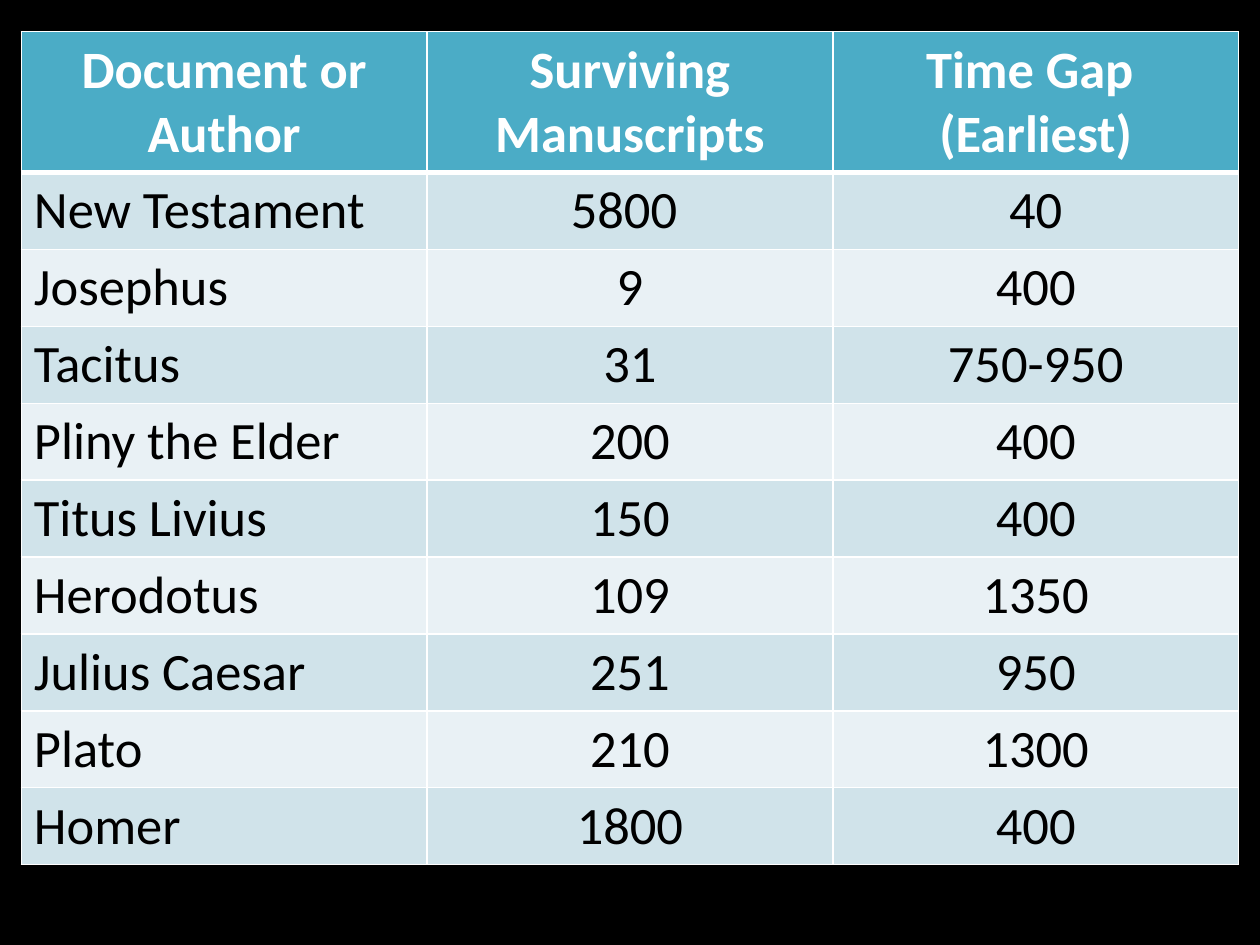
from dataclasses import dataclass

from lxml.etree import SubElement
from pptx import Presentation
from pptx.dml.color import RGBColor as Rgb
from pptx.enum.text import PP_ALIGN as Align
from pptx.oxml.ns import qn
from pptx.util import Cm, Pt

HEADINGS = ["Document or Author", "Surviving\nManuscripts", "Time Gap \n(Earliest)"]
RECORDS = [
    ("New Testament", "5800 ", "40"),
    ("Josephus", "9", "400"),
    ("Tacitus", "31", "750-950"),
    ("Pliny the Elder", "200", "400"),
    ("Titus Livius", "150", "400"),
    ("Herodotus", "109", "1350"),
    ("Julius Caesar", "251", "950"),
    ("Plato", "210", "1300"),
    ("Homer", "1800", "400"),
]


@dataclass(frozen=True)
class Theme:
    font: str = "Calibri"
    size: int = 30
    background: str = "000000"
    heading_fill: str = "4BACC6"
    heading_text: str = "FFFFFF"
    body_text: str = "000000"
    bands: tuple = ("D0E3EA", "E9F1F5")
    border: str = "FFFFFF"
    thin: int = 1
    thick: int = 3


THEME = Theme()
LEFT, TOP, COLUMN_WIDTH = 0.43, 0.64, 8.18
HEADING_HEIGHT, RECORD_HEIGHT = 2.84, 1.55


def add_borders(cell, top, bottom):
    properties = cell._tc.get_or_add_tcPr()
    widths = {"lnL": THEME.thin, "lnR": THEME.thin, "lnT": top, "lnB": bottom}
    for side, width in widths.items():
        line = SubElement(properties, qn(f"a:{side}"), w=str(Pt(width)))
        fill = SubElement(line, qn("a:solidFill"))
        SubElement(fill, qn("a:srgbClr"), val=THEME.border)


def fill_cell(cell, text, row, column):
    heading = row == 0
    add_borders(
        cell,
        top=THEME.thick if row == 1 else THEME.thin,
        bottom=THEME.thick if heading else THEME.thin,
    )
    fill_color = THEME.heading_fill if heading else THEME.bands[(row - 1) % 2]
    cell.fill.solid()
    cell.fill.fore_color.rgb = Rgb.from_string(fill_color)
    cell.text_frame.text = text
    for para in cell.text_frame.paragraphs:
        para.alignment = Align.CENTER if heading or column else Align.LEFT
        for span in para.runs:
            span.font.name = THEME.font
            span.font.size = Pt(THEME.size)
            span.font.bold = heading
            text_color = THEME.heading_text if heading else THEME.body_text
            span.font.color.rgb = Rgb.from_string(text_color)


def add_manuscript_table(page):
    rows = [HEADINGS, *RECORDS]
    heights = [HEADING_HEIGHT] + [RECORD_HEIGHT] * len(RECORDS)
    table = page.shapes.add_table(
        len(rows), len(HEADINGS), Cm(LEFT), Cm(TOP),
        Cm(COLUMN_WIDTH * len(HEADINGS)), Cm(sum(heights)),
    ).table
    for column in table.columns:
        column.width = Cm(COLUMN_WIDTH)
    for row, (texts, height) in enumerate(zip(rows, heights)):
        table.rows[row].height = Cm(height)
        for column, text in enumerate(texts):
            fill_cell(table.cell(row, column), text, row, column)


def main():
    deck = Presentation()
    deck.slide_width, deck.slide_height = Cm(25.4), Cm(19.05)
    page = deck.slides.add_slide(deck.slide_layouts[6])
    page.background.fill.solid()
    page.background.fill.fore_color.rgb = Rgb.from_string(THEME.background)
    add_manuscript_table(page)
    deck.save("out.pptx")


if __name__ == "__main__":
    main()
